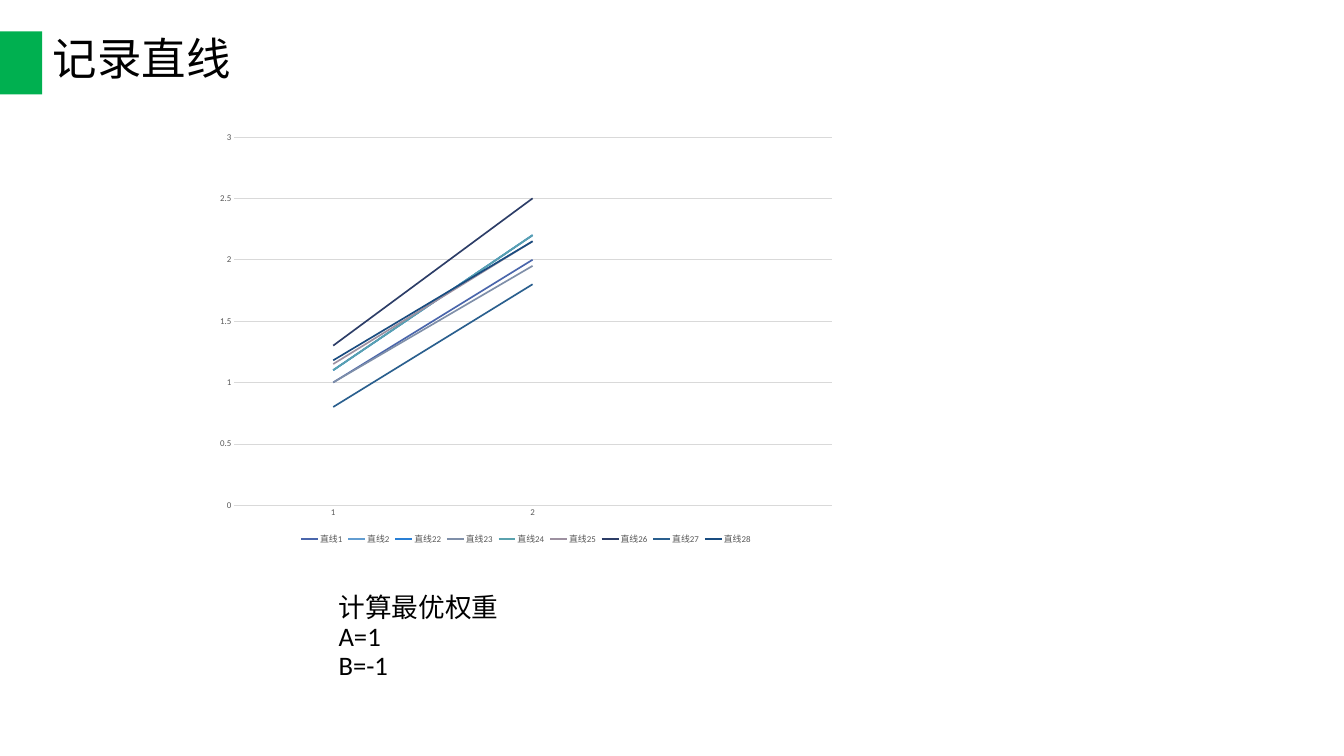
from pptx import Presentation
from pptx.chart.data import CategoryChartData
from pptx.dml.color import RGBColor
from pptx.enum.chart import XL_CHART_TYPE, XL_LEGEND_POSITION, XL_MARKER_STYLE, XL_TICK_MARK
from pptx.enum.shapes import MSO_SHAPE
from pptx.enum.text import MSO_ANCHOR, MSO_AUTO_SIZE, PP_ALIGN
from pptx.util import Pt

COLORS = {"text": "000000", "accent": "00B050", "label": "595959", "grid": "D9D9D9"}

# Name, values at 1 and 2, line colour
LINES = [
    ("直线1", (1, 2), "4A66AC"),
    ("直线2", (1.1, 2.2), "629DD1"),
    ("直线22", (1.1, 2.2), "297FD5"),
    ("直线23", (1, 1.95), "7F8FA9"),
    ("直线24", (1.1, 2.2), "5AA2AE"),
    ("直线25", (1.15, 2.15), "9D90A0"),
    ("直线26", (1.3, 2.5), "2C3D67"),
    ("直线27", (0.8, 1.8), "2A5F8E"),
    ("直线28", (1.18, 2.15), "194C80"),
]


class SlideBuilder:
    font = "Calibri"

    def __init__(self, slide):
        self.s = slide

    def style_font(self, font, size, color):
        font.name = self.font
        font.size = Pt(size)
        font.color.rgb = RGBColor.from_string(COLORS[color])

    def style_line(self, line, color, width):
        line.color.rgb = RGBColor.from_string(color)
        line.width = Pt(width)

    def fill_text(self, sp, text, size):
        tf = sp.text_frame
        tf.text = text
        tf.word_wrap = True
        tf.auto_size = MSO_AUTO_SIZE.NONE
        tf.vertical_anchor = MSO_ANCHOR.MIDDLE
        for p in tf.paragraphs:
            p.alignment = PP_ALIGN.LEFT
            p.line_spacing = 0.9
            p.space_before = Pt(0)
            for r in p.runs:
                self.style_font(r.font, size, "text")

    def title(self, text, x, y, w, h, size):
        sp = self.s.shapes.title
        sp.left, sp.top, sp.width, sp.height = Pt(x), Pt(y), Pt(w), Pt(h)
        self.fill_text(sp, text, size)

    def text(self, text, x, y, w, h, size):
        sp = self.s.shapes.add_textbox(Pt(x), Pt(y), Pt(w), Pt(h))
        self.fill_text(sp, text, size)

    def block(self, x, y, w, h, color):
        sp = self.s.shapes.add_shape(MSO_SHAPE.RECTANGLE, Pt(x), Pt(y), Pt(w), Pt(h))
        sp.shadow.inherit = False
        sp.fill.solid()
        sp.fill.fore_color.rgb = RGBColor.from_string(COLORS[color])
        sp.line.fill.background()

    def line_chart(self, x, y, w, h, categories, lines):
        data = CategoryChartData()
        data.categories = categories
        for name, values, _ in lines:
            data.add_series(name, (*values, None))
        chart = self.s.shapes.add_chart(
            XL_CHART_TYPE.LINE, Pt(x), Pt(y), Pt(w), Pt(h), data).chart
        self.style_font(chart.font, 10, "text")
        chart.has_title = False
        chart.plots[0].vary_by_categories = False

        # Series
        for series, (_, _, color) in zip(chart.plots[0].series, lines):
            series.smooth = False
            series.marker.style = XL_MARKER_STYLE.NONE
            self.style_line(series.format.line, color, 2.25)

        # Axes
        for axis in (chart.category_axis, chart.value_axis):
            axis.major_tick_mark = axis.minor_tick_mark = XL_TICK_MARK.NONE
            self.style_font(axis.tick_labels.font, 12, "label")
        self.style_line(chart.category_axis.format.line, COLORS["grid"], 0.75)
        val = chart.value_axis
        val.minimum_scale, val.maximum_scale, val.major_unit = 0, 3, 0.5
        val.format.line.fill.background()
        val.has_major_gridlines = True
        self.style_line(val.major_gridlines.format.line, COLORS["grid"], 0.75)

        # Legend
        chart.has_legend = True
        chart.legend.position = XL_LEGEND_POSITION.BOTTOM
        chart.legend.include_in_layout = False
        self.style_font(chart.legend.font, 12, "label")


def main():
    prs = Presentation()
    prs.slide_width, prs.slide_height = Pt(1814.4), Pt(1020.24)
    b = SlideBuilder(prs.slides.add_slide(prs.slide_layouts[5]))

    # Heading
    b.block(0, 42.5, 57, 85, "accent")
    b.title("记录直线", 64, 39, 1271, 88, 60)

    # Recorded lines
    b.line_chart(280, 166.3, 860, 573, ["1", "2", ""], LINES)

    # Best weights
    b.text("计算最优权重\nA=1\nB=-1", 450, 758, 909, 205, 36)

    prs.save("out.pptx")


if __name__ == "__main__":
    main()
